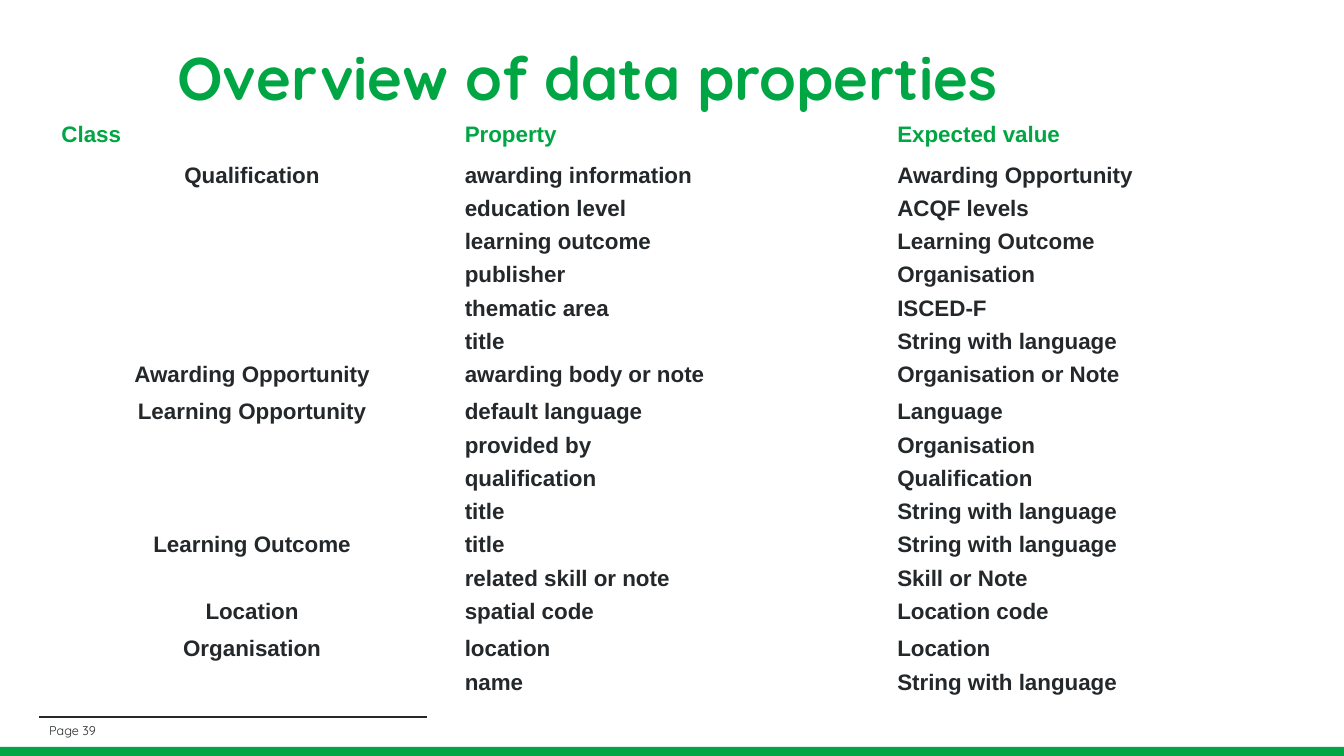
from pptx import Presentation
from pptx.dml.color import RGBColor
from pptx.enum.shapes import MSO_CONNECTOR, MSO_SHAPE
from pptx.enum.text import MSO_ANCHOR, MSO_AUTO_SIZE, PP_ALIGN
from pptx.oxml.ns import qn
from pptx.util import Inches, Pt
from lxml.etree import SubElement

COLORS = {"green": "00A643", "ink": "24282A"}
TITLE_FONT = {"name": "Quicksand", "size": Pt(42.9), "bold": True}
PAGE_FONT = {"name": "Quicksand", "size": Pt(9), "bold": False}
CELL_FONT = {"name": "Arial", "size": Pt(16), "bold": True}
CELL_FORMAT = {
    "margin_left": Inches(0.12),
    "margin_right": Inches(0.1),
    "margin_top": 0,
    "margin_bottom": 0,
    "vertical_anchor": MSO_ANCHOR.TOP,
}
FRAME_FORMAT = {
    "word_wrap": True,
    "auto_size": MSO_AUTO_SIZE.NONE,
    "vertical_anchor": MSO_ANCHOR.MIDDLE,
}

HEADINGS = ["Class", "Property", "Expected value"]
CLASSES = {
    "Qualification": [
        ("awarding information", "Awarding Opportunity"),
        ("education level", "ACQF levels"),
        ("learning outcome", "Learning Outcome"),
        ("publisher", "Organisation"),
        ("thematic area", "ISCED-F"),
        ("title", "String with language"),
    ],
    "Awarding Opportunity": [("awarding body or note", "Organisation or Note")],
    "Learning Opportunity": [
        ("default language", "Language"),
        ("provided by", "Organisation"),
        ("qualification", "Qualification"),
        ("title", "String with language"),
    ],
    "Learning Outcome": [
        ("title", "String with language"),
        ("related skill or note", "Skill or Note"),
    ],
    "Location": [("spatial code", "Location code")],
    "Organisation": [("location", "Location"), ("name", "String with language")],
}
COLUMN_WIDTHS = [4, 4.29, 4.32]
ROW_HEIGHT = 0.33
TALL_ROWS = {0: 0.4, 7: 0.37, 14: 0.37}


def apply_format(target, values):
    for attribute, value in values.items():
        setattr(target, attribute, value)


def write_text(frame, text, font_format, color, alignment, spacing):
    paragraph = frame.paragraphs[0]
    paragraph.alignment = alignment
    paragraph.line_spacing = spacing
    run = paragraph.add_run()
    run.text = text
    apply_format(run.font, font_format)
    run.font.color.rgb = RGBColor.from_string(COLORS[color])


presentation = Presentation()
presentation.slide_width = Inches(13.33)
presentation.slide_height = Inches(7.5)
slide = presentation.slides.add_slide(presentation.slide_layouts[5])

bottom_band = slide.shapes.add_shape(
    MSO_SHAPE.RECTANGLE, Inches(-0.03), Inches(7.41), Inches(13.4), Inches(0.13)
)
bottom_band.shadow.inherit = False
bottom_band.fill.solid()
bottom_band.fill.fore_color.rgb = RGBColor.from_string(COLORS["green"])
bottom_band.line.fill.background()

footer_rule = slide.shapes.add_connector(
    MSO_CONNECTOR.STRAIGHT, Inches(0.39), Inches(7.11), Inches(4.24), Inches(7.11)
)
footer_rule.line.color.rgb = RGBColor.from_string(COLORS["ink"])
footer_rule.line.width = Pt(1.5)
SubElement(footer_rule.element.spPr, qn("a:effectLst"))

page_number = slide.shapes.add_textbox(
    Inches(0.39), Inches(7.15), Inches(4.06), Inches(0.19)
)
apply_format(page_number.text_frame, FRAME_FORMAT)
write_text(page_number.text_frame, "Page 39", PAGE_FONT, "ink", PP_ALIGN.LEFT, 1.0)

heading = slide.shapes.title
apply_format(heading, {
    "left": Inches(1.66), "top": Inches(0.17),
    "width": Inches(11.24), "height": Inches(1.26),
})
apply_format(heading.text_frame, FRAME_FORMAT)
write_text(heading.text_frame, "Overview of data properties", TITLE_FONT, "green",
           PP_ALIGN.LEFT, 0.9)

row_count = 1 + sum(len(properties) for properties in CLASSES.values())
row_heights = [TALL_ROWS.get(index, ROW_HEIGHT) for index in range(row_count)]
overview = slide.shapes.add_table(
    row_count, len(HEADINGS), Inches(0.49), Inches(1.18),
    Inches(sum(COLUMN_WIDTHS)), Inches(sum(row_heights))
).table
apply_format(overview, {"first_row": False, "horz_banding": False})
for column, width in zip(overview.columns, COLUMN_WIDTHS):
    column.width = Inches(width)
for row, height in zip(overview.rows, row_heights):
    row.height = Inches(height)
for cell in overview.iter_cells():
    apply_format(cell, CELL_FORMAT)
    cell.fill.background()

for column_index, label in enumerate(HEADINGS):
    write_text(overview.cell(0, column_index).text_frame, label, CELL_FONT, "green",
               PP_ALIGN.JUSTIFY, 1.15)

row_index = 1
for class_name, properties in CLASSES.items():
    class_cell = overview.cell(row_index, 0)
    if len(properties) > 1:
        class_cell.merge(overview.cell(row_index + len(properties) - 1, 0))
    write_text(class_cell.text_frame, class_name, CELL_FONT, "ink", PP_ALIGN.CENTER, 1.15)
    for property_and_value in properties:
        for column_index, label in enumerate(property_and_value, start=1):
            write_text(overview.cell(row_index, column_index).text_frame, label,
                       CELL_FONT, "ink", PP_ALIGN.JUSTIFY, 1.15)
        row_index += 1

presentation.save("out.pptx")
